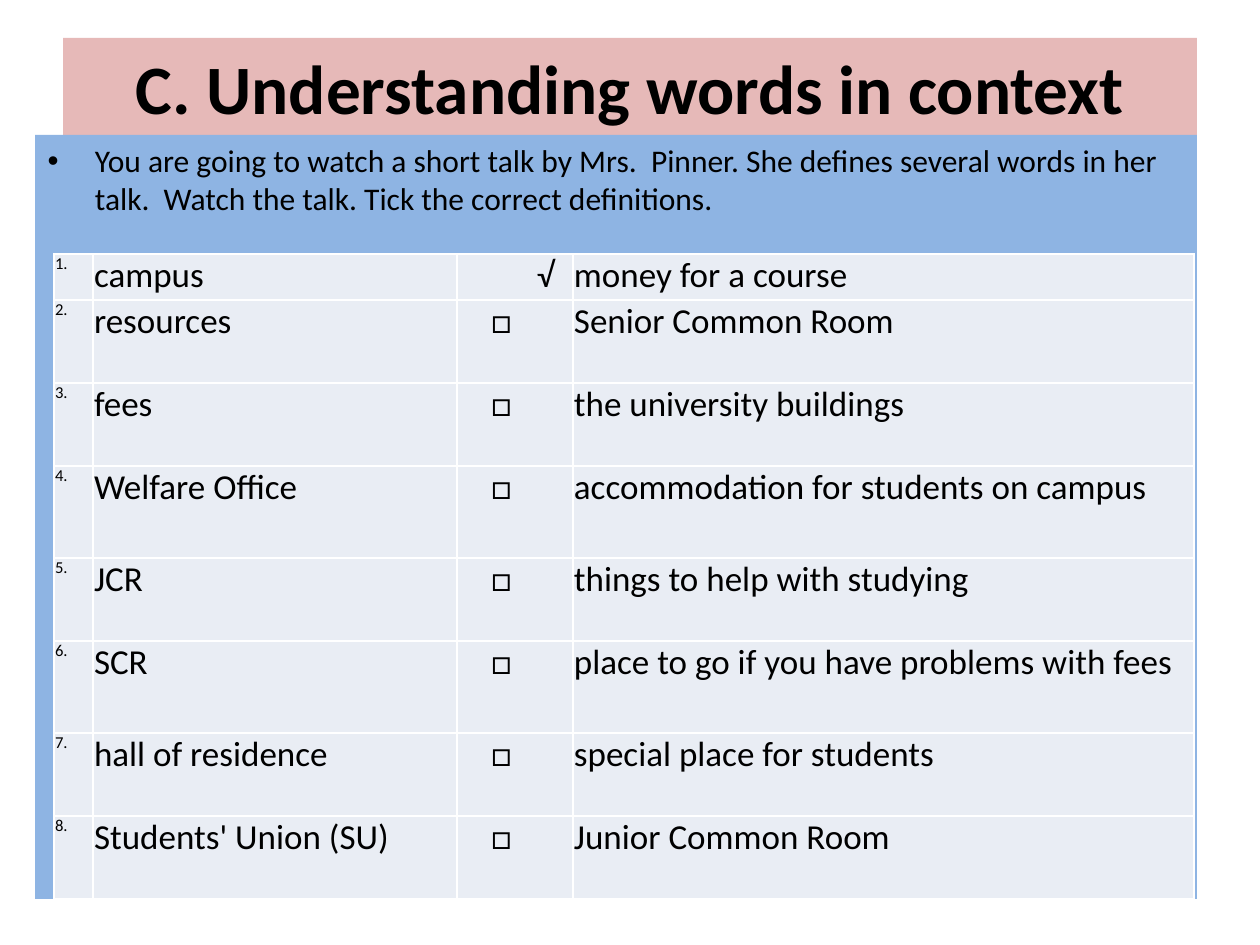
from pptx import Presentation
from pptx import util as u
from pptx.dml.color import RGBColor
from pptx.enum import text

PX = u.Inches(1) / 126
BLACK = RGBColor(0x00, 0x00, 0x00)
PINK = RGBColor(0xE6, 0xB9, 0xB8)
BLUE = RGBColor(0x8E, 0xB4, 0xE3)
PALE = RGBColor(0xE9, 0xED, 0xF4)

COLUMNS = [39, 364, 116, 621]
ROWS = [46, 83, 83, 92, 83, 92, 83, 83]
ENTRIES = [
    ("campus", "√", "money for a course"),
    ("resources", "□", "Senior Common Room"),
    ("fees", "□", "the university buildings"),
    ("Welfare Office", "□", "accommodation for students on campus"),
    ("JCR", "□", "things to help with studying"),
    ("SCR", "□", "place to go if you have problems with fees"),
    ("hall of residence", "□", "special place for students"),
    ("Students' Union (SU)", "□", "Junior Common Room"),
]
MARK_INDENT = {"√": 79, "□": 33}


def px(n):
    return u.Emu(round(n * PX))


def write(tf, words, size, bold=False, align=None):
    p = tf.paragraphs[0]
    p.alignment = align
    r = p.add_run()
    r.text = words
    r.font.name = "Calibri"
    r.font.size = u.Pt(size)
    r.font.bold = bold
    r.font.color.rgb = BLACK


def place(sp, box, color):
    """Move a placeholder to the box and fill it."""
    sp.left, sp.top, sp.width, sp.height = map(px, box)
    sp.fill.solid()
    sp.fill.fore_color.rgb = color
    sp.text_frame.auto_size = text.MSO_AUTO_SIZE.NONE
    return sp.text_frame


def add_title(s, box):
    tf = place(s.shapes.title, box, PINK)
    tf.vertical_anchor = text.MSO_ANCHOR.MIDDLE
    write(tf, "C. Understanding words in context", 39.6, bold=True,
          align=text.PP_ALIGN.CENTER)


def add_instructions(s, box):
    tf = place(s.placeholders[1], box, BLUE)
    write(tf, "You are going to watch a short talk by Mrs.  Pinner. She defines "
              "several words in her talk.  Watch the talk. Tick the correct "
              "definitions.", 18)


def fill_cell(cell, words, size, indent=0):
    cell.fill.solid()
    cell.fill.fore_color.rgb = PALE
    cell.margin_left = px(1 + indent)
    cell.margin_right = px(1)
    cell.margin_top = cell.margin_bottom = 0
    write(cell.text_frame, words, size)


def add_definitions(s, left, top):
    frame = s.shapes.add_table(len(ROWS), len(COLUMNS), px(left), px(top),
                               px(sum(COLUMNS)), px(sum(ROWS)))
    table = frame.table
    table.first_row = table.horz_banding = False
    for column, width in zip(table.columns, COLUMNS):
        column.width = px(width)
    for i, (row, height, entry) in enumerate(zip(table.rows, ROWS, ENTRIES)):
        row.height = px(height)
        number, *cells = row.cells
        fill_cell(number, f"{i + 1}.", 9.5)
        for cell, words in zip(cells, entry):
            fill_cell(cell, words, 20, MARK_INDENT.get(words, 0))


def main():
    prs = Presentation()
    prs.slide_width, prs.slide_height = px(1260), px(945)
    s = prs.slides.add_slide(prs.slide_layouts[1])
    add_title(s, (63, 38, 1134, 97))
    add_instructions(s, (35, 135, 1162, 764))
    add_definitions(s, 54, 254)
    prs.save("out.pptx")


if __name__ == "__main__":
    main()
